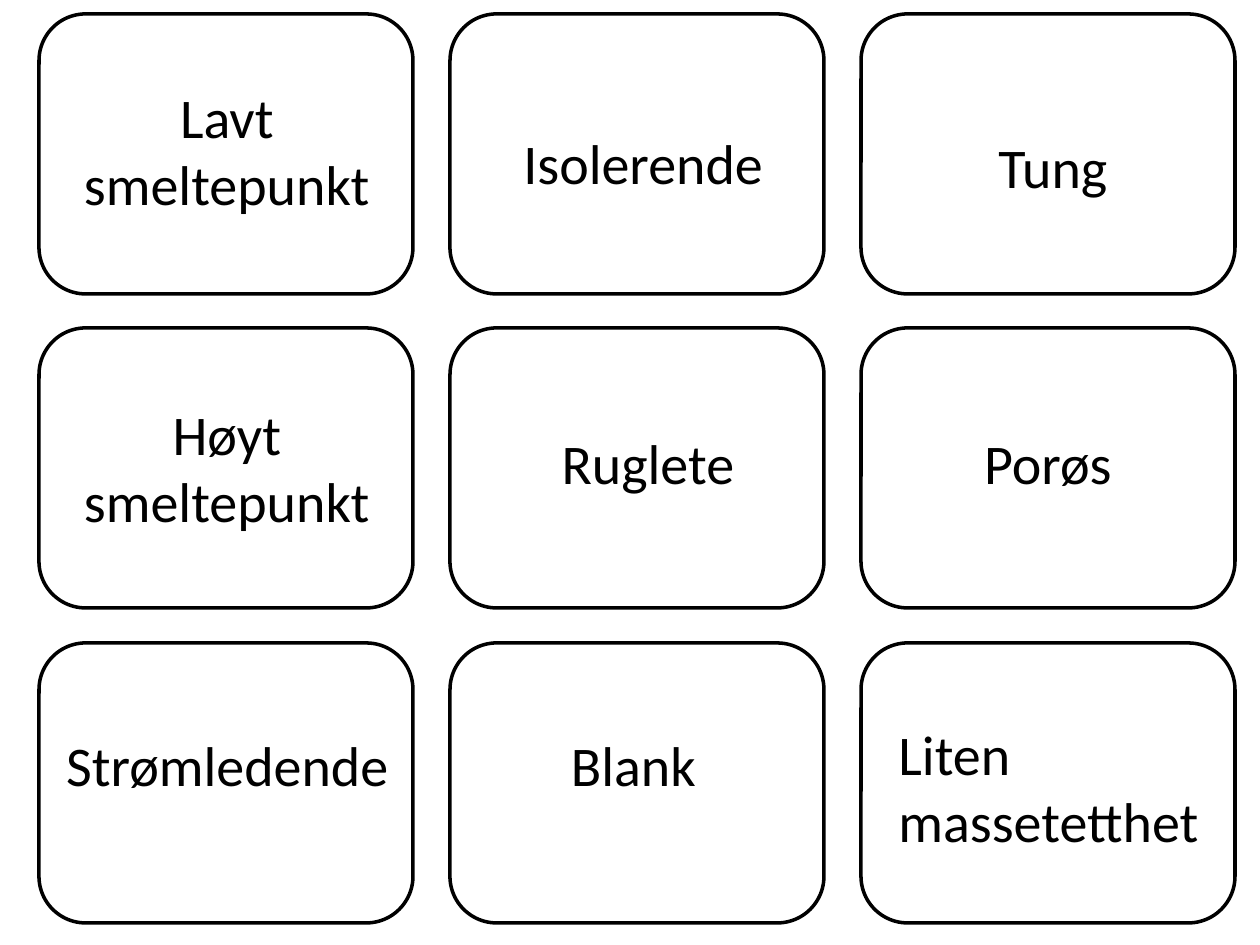
from pptx import Presentation
from pptx import util as u
from pptx.dml.color import RGBColor
from pptx.enum import shapes, text

PX_PER_INCH = 126
CENTER = text.PP_ALIGN.CENTER
LEFT = text.PP_ALIGN.LEFT


def px(n):
    return u.Emu(round(n * 914400 / PX_PER_INCH))


def color(value):
    return RGBColor.from_string(value)


class CardSheet:
    font = "Calibri"
    size = 32
    ink = "000000"
    paper = "FFFFFF"

    def __init__(self, slide):
        self.slide = slide

    def card(self, x, y, w, h):
        sp = self.slide.shapes.add_shape(
            shapes.MSO_SHAPE.ROUNDED_RECTANGLE, px(x), px(y), px(w), px(h))
        sp.shadow.inherit = False
        sp.fill.solid()
        sp.fill.fore_color.rgb = color(self.paper)
        sp.line.color.rgb = color(self.ink)
        sp.line.width = u.Pt(2)

    def label(self, words, x, y, w, h, align):
        sp = self.slide.shapes.add_textbox(px(x), px(y), px(w), px(h))
        tf = sp.text_frame
        tf.word_wrap = True
        tf.auto_size = text.MSO_AUTO_SIZE.SHAPE_TO_FIT_TEXT
        p = tf.paragraphs[0]
        p.alignment = align
        r = p.add_run()
        r.text = words
        r.font.name = self.font
        r.font.size = u.Pt(self.size)
        r.font.color.rgb = color(self.ink)


def main():
    prs = Presentation()
    prs.slide_width = u.Inches(10)
    prs.slide_height = u.Inches(7.5)
    sheet = CardSheet(prs.slides.add_slide(prs.slide_layouts[6]))

    for row in range(3):
        for col in range(3):
            sheet.card(39 + col * 411, 14 + row * 629 // 2, 374, 280)

    one_line, two_lines = 81, 149
    properties = [
        ("Lavt smeltepunkt", 63, 76, 328, two_lines, CENTER),
        ("Isolerende", 511, 122, 287, one_line, LEFT),
        ("Tung", 940, 126, 226, one_line, CENTER),
        ("Høyt smeltepunkt", 63, 393, 328, two_lines, CENTER),
        ("Ruglete", 526, 422, 244, one_line, CENTER),
        ("Porøs", 935, 422, 226, one_line, CENTER),
        ("Strømledende", 48, 724, 359, one_line, CENTER),
        ("Blank", 529, 724, 209, one_line, CENTER),
        ("Liten massetetthet", 886, 713, 349, two_lines, LEFT),
    ]
    for item in properties:
        sheet.label(*item)

    prs.save("out.pptx")


if __name__ == "__main__":
    main()
